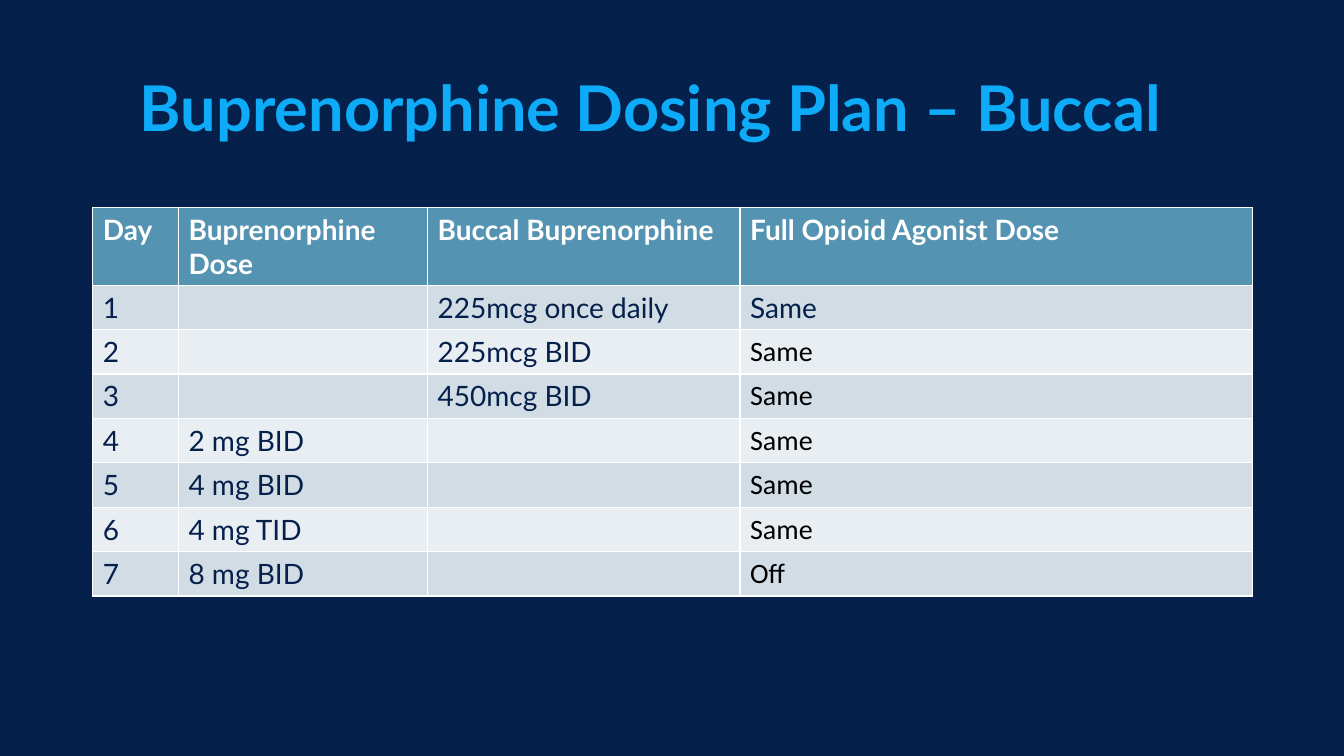
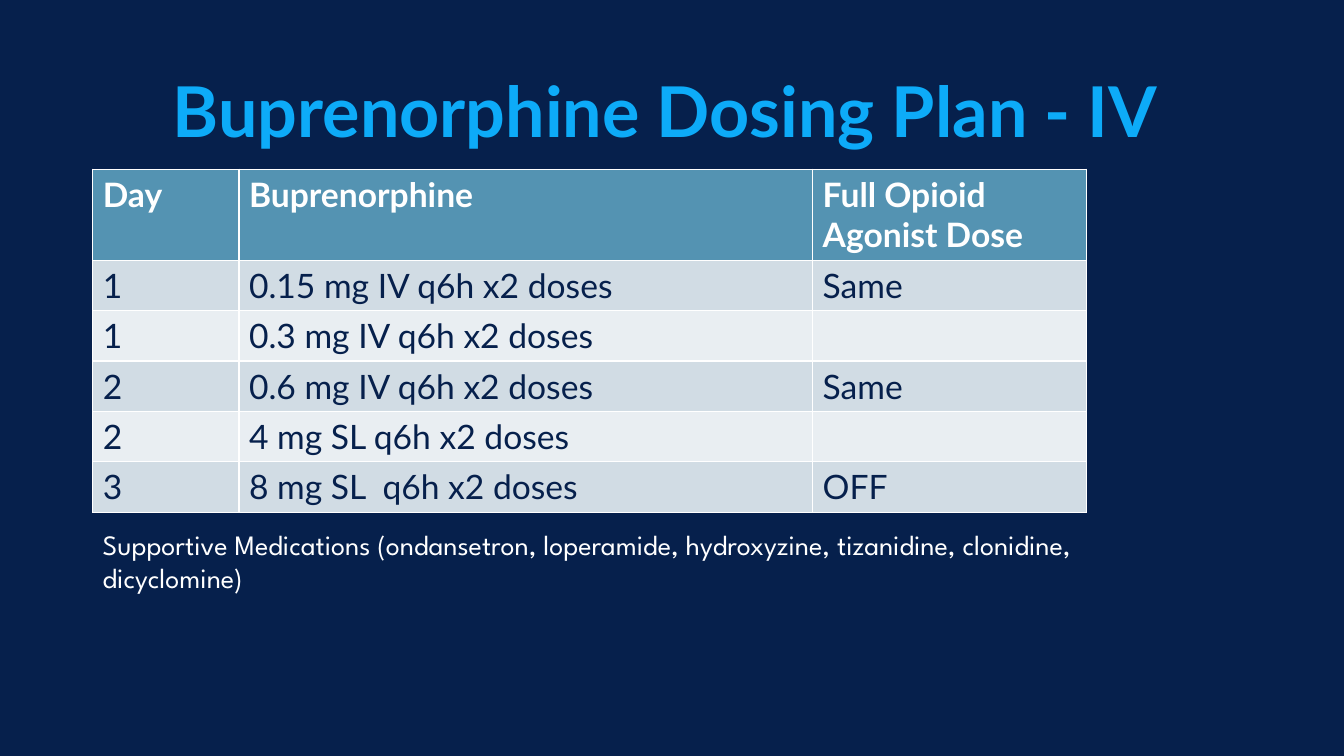
from pptx import Presentation
from pptx.dml.color import RGBColor
from pptx.enum.text import MSO_ANCHOR, MSO_AUTO_SIZE, PP_ALIGN
from pptx.util import Inches, Pt

CENTER = PP_ALIGN.CENTER
MIDDLE = MSO_ANCHOR.MIDDLE
NO_AUTOFIT = MSO_AUTO_SIZE.NONE
TITLE_ONLY = 5

NAVY, SKY, WHITE, BLACK = "06204C", "0DABF8", "FFFFFF", "000000"
HEADER_FILL = "5493B2"
BAND_FILLS = ("D1DCE4", "E9EEF2")
MAIN_FONT, PLAIN_FONT, NOTE_FONT = "Lato", "Calibri", "League Spartan"
LEFT = 0.92

PLANS = [
    {
        "title": "Buprenorphine Dosing Plan – Buccal",
        "title_box": (0.7, 0.55, 11.5, 1.01),
        "title_size": 45,
        "top": 2.06,
        "columns": (0.85, 2.47, 3.1, 5.08),
        "row_heights": (0.77, 0.44),
        "size": 20,
        "plain_cells": [(row, 3) for row in range(2, 8)],
        "rows": [
            ("Day", "Buprenorphine Dose", "Buccal Buprenorphine", "Full Opioid Agonist Dose"),
            ("1", "", "225mcg once daily", "Same"),
            ("2", "", "225mcg BID", "Same"),
            ("3", "", "450mcg BID", "Same"),
            ("4", "2 mg BID", "", "Same"),
            ("5", "4 mg BID", "", "Same"),
            ("6", "4 mg TID", "", "Same"),
            ("7", "8 mg BID", "", "Off"),
        ],
    },
    {
        "title": "Buprenorphine Dosing Plan - IV ",
        "title_box": (0.67, 0.25, 12, 1.67),
        "title_size": 50,
        "top": 1.68,
        "columns": (1.45, 5.69, 2.72),
        "row_heights": (0.9, 0.5),
        "size": 24,
        "plain_cells": [],
        "rows": [
            ("Day", "Buprenorphine", "Full Opioid Agonist Dose"),
            ("1", "0.15 mg IV q6h x2 doses", "Same"),
            ("1", "0.3 mg IV q6h x2 doses", ""),
            ("2", "0.6 mg IV q6h x2 doses", "Same"),
            ("2", "4 mg SL q6h x2 doses", ""),
            ("3", "8 mg SL  q6h x2 doses", "OFF"),
        ],
        "note": "Supportive Medications (ondansetron, loperamide, hydroxyzine, "
                "tizanidine, clonidine, dicyclomine)",
        "note_box": (LEFT, 5.18, 9.86, 0.77),
    },
]


def rgb(color):
    return RGBColor.from_string(color)


def style_font(font, size, color, name=MAIN_FONT, bold=False):
    font.size, font.name, font.bold = Pt(size), name, bold
    font.color.rgb = rgb(color)


def set_title(slide, plan):
    title = slide.shapes.title
    title.left, title.top, title.width, title.height = map(Inches, plan["title_box"])
    frame = title.text_frame
    frame.text = plan["title"]
    frame.auto_size = NO_AUTOFIT
    frame.word_wrap = True
    frame.vertical_anchor = MIDDLE
    frame.margin_left = frame.margin_right = 0
    frame.margin_top = frame.margin_bottom = Inches(0.01)
    paragraph = frame.paragraphs[0]
    paragraph.alignment = CENTER
    style_font(paragraph.runs[0].font, plan["title_size"], SKY, bold=True)


def add_dosing_table(slide, plan):
    rows, columns = plan["rows"], plan["columns"]
    header_height, body_height = plan["row_heights"]
    height = header_height + body_height * (len(rows) - 1)
    table = slide.shapes.add_table(
        len(rows), len(columns), Inches(LEFT), Inches(plan["top"]),
        Inches(sum(columns)), Inches(height)).table
    for column, width in zip(table.columns, columns):
        column.width = Inches(width)
    for row_index, texts in enumerate(rows):
        is_header = row_index == 0
        table.rows[row_index].height = Inches(header_height if is_header else body_height)
        fill = HEADER_FILL if is_header else BAND_FILLS[(row_index - 1) % 2]
        for column_index, text in enumerate(texts):
            cell = table.cell(row_index, column_index)
            cell.fill.solid()
            cell.fill.fore_color.rgb = rgb(fill)
            if not text:
                continue
            cell.text = text
            font = cell.text_frame.paragraphs[0].runs[0].font
            if (row_index, column_index) in plan["plain_cells"]:
                style_font(font, plan["size"], BLACK, PLAIN_FONT)
            else:
                style_font(font, plan["size"], WHITE if is_header else NAVY, bold=is_header)


def add_note(slide, plan):
    frame = slide.shapes.add_textbox(*map(Inches, plan["note_box"])).text_frame
    frame.word_wrap = True
    frame.text = plan["note"]
    style_font(frame.paragraphs[0].runs[0].font, 20, WHITE, NOTE_FONT)


def main():
    presentation = Presentation()
    presentation.slide_width, presentation.slide_height = Inches(13.33), Inches(7.5)
    background = presentation.slide_master.background.fill
    background.solid()
    background.fore_color.rgb = rgb(NAVY)
    for plan in PLANS:
        slide = presentation.slides.add_slide(presentation.slide_layouts[TITLE_ONLY])
        set_title(slide, plan)
        add_dosing_table(slide, plan)
        if "note" in plan:
            add_note(slide, plan)
    presentation.save("out.pptx")


if __name__ == "__main__":
    main()
